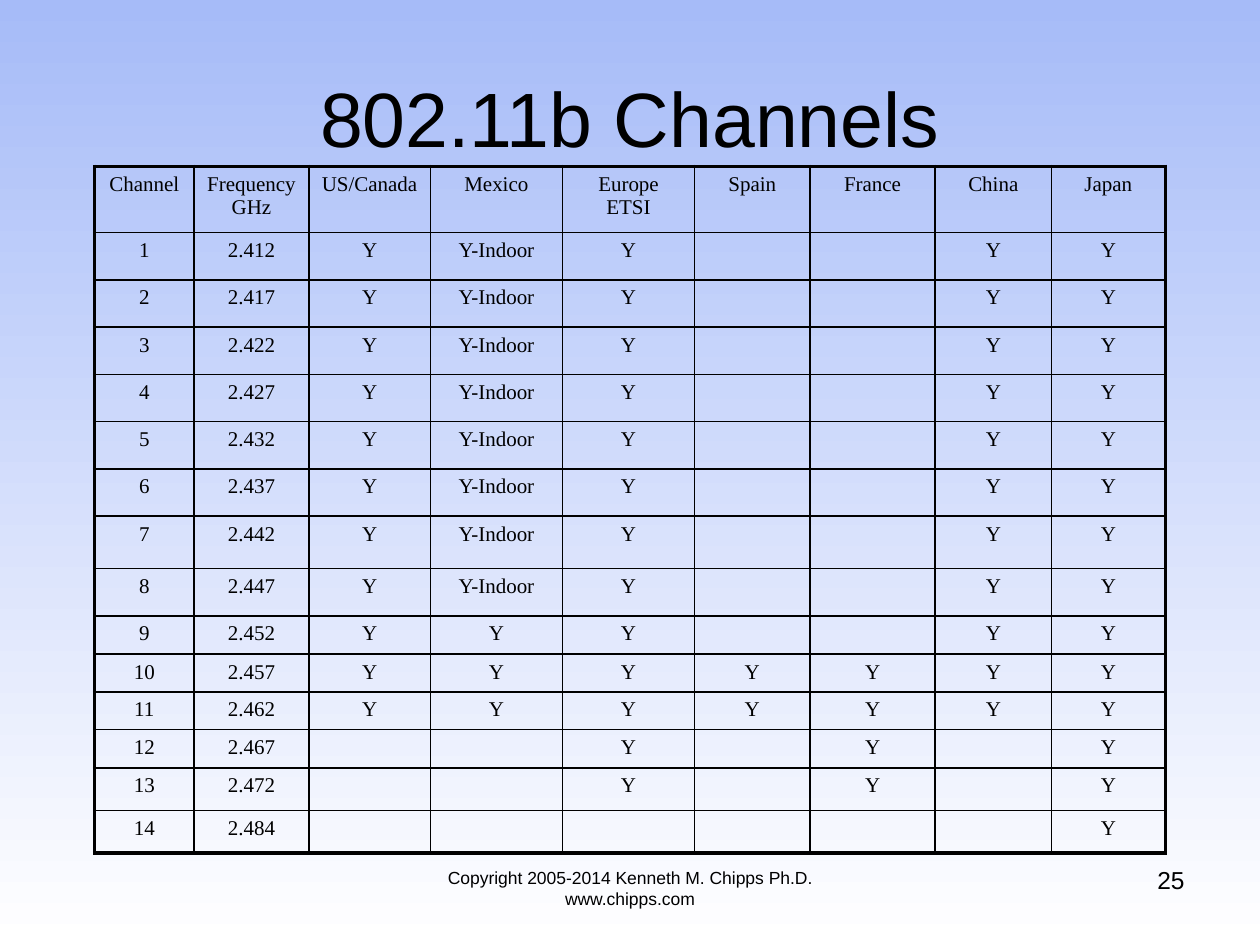
import pptx
import pptx.util
import pptx.dml.color
import pptx.enum.text
import pptx.oxml.ns
import lxml.etree

Pt = pptx.util.Pt
qn = pptx.oxml.ns.qn
ALIGN = pptx.enum.text.PP_ALIGN
ANCHOR = pptx.enum.text.MSO_ANCHOR

COLORS = {"sky": "A6BBF8", "white": "FFFFFF", "ink": "000000"}

# Table content and sizes; \v is a line break inside a cell
HEADS = ["Channel", "Frequency\vGHz", "US/Canada", "Mexico", "Europe\vETSI",
         "Spain", "France", "China", "Japan"]
WIDTHS = [57, 65.5, 69.5, 75.5, 75.5, 66, 71.5, 66.5, 65]
HEIGHTS = [38] + [27] * 6 + [30, 27] + [21.6] * 4 + [24.3] * 2
INSET = 6  # side margin that keeps each heading word on one line
# First and last channel allowed in each region
RANGES = [(1, 11), (1, 11), (1, 13), (10, 11), (10, 13), (1, 11), (1, 14)]
MEXICO = 1
INDOOR = 8  # last indoor-only channel in Mexico
THIN, THICK = 1, 2.25


def rgb(name):
    return pptx.dml.color.RGBColor.from_string(COLORS[name])


def write(frame, text, size=12, font="Arial", color="ink", align=ALIGN.CENTER,
          anchor=ANCHOR.TOP):
    frame.word_wrap = True
    frame.vertical_anchor = anchor
    para = frame.paragraphs[0]
    para.text = text
    para.alignment = align
    for run in para.runs:
        run.font.size = Pt(size)
        run.font.name = font
        run.font.color.rgb = rgb(color)
    # Line breaks and empty cells need the size as well
    for gap in para._p.findall(qn("a:br")):
        lxml.etree.SubElement(gap, qn("a:rPr"), sz=str(size * 100))
    lxml.etree.SubElement(para._p, qn("a:endParaRPr"), sz=str(size * 100))


def box(slide, text, left, top, width, height, **style):
    shape = slide.shapes.add_textbox(Pt(left), Pt(top), Pt(width), Pt(height))
    write(shape.text_frame, text, **style)


def edge(cell, side, width):
    line = lxml.etree.SubElement(cell._tc.get_or_add_tcPr(), qn("a:ln" + side),
                                 w=str(Pt(width)))
    fill = lxml.etree.SubElement(line, qn("a:solidFill"))
    lxml.etree.SubElement(fill, qn("a:srgbClr"), val=COLORS["ink"])


def mark(region, channel):
    first, last = RANGES[region]
    if not first <= channel <= last:
        return ""
    return "Y-Indoor" if region == MEXICO and channel <= INDOOR else "Y"


def rows():
    yield HEADS
    for num in range(1, 15):
        # Channels are 5 MHz apart, except the last
        freq = 2.484 if num == 14 else 2.407 + 0.005 * num
        yield ([str(num), f"{freq:.3f}"]
               + [mark(region, num) for region in range(len(RANGES))])


def grid(slide, left, top):
    table = slide.shapes.add_table(len(HEIGHTS), len(WIDTHS), Pt(left), Pt(top),
                                   Pt(sum(WIDTHS)), Pt(sum(HEIGHTS))).table
    table.first_row = table.horz_banding = False
    for col, width in zip(table.columns, WIDTHS):
        col.width = Pt(width)
    for row, height in zip(table.rows, HEIGHTS):
        row.height = Pt(height)
    for r, texts in enumerate(rows()):
        for c, text in enumerate(texts):
            cell = table.cell(r, c)
            cell.margin_left = cell.margin_right = Pt(INSET)
            write(cell.text_frame, text, font="Times New Roman")
            outer = {"L": c == 0, "R": c == len(WIDTHS) - 1,
                     "T": r == 0, "B": r == len(HEIGHTS) - 1}
            for side, thick in outer.items():
                edge(cell, side, THICK if thick else THIN)
            cell.fill.background()


def paint(slide):
    fill = slide.background.fill
    fill.gradient()
    fill.gradient_angle = 270
    for stop, name, place in zip(fill.gradient_stops, ("sky", "white"), (0, 1)):
        stop.color.rgb = rgb(name)
        stop.position = place


def main():
    deck = pptx.Presentation()
    deck.slide_width, deck.slide_height = Pt(720), Pt(540)
    slide = deck.slides.add_slide(deck.slide_layouts[5])
    paint(slide)

    # Title
    title = slide.shapes.title
    title.left, title.top, title.width, title.height = map(Pt, (36, 21.6, 648, 90))
    write(title.text_frame, "802.11b Channels", size=44, anchor=ANCHOR.MIDDLE)

    # Channel table
    grid(slide, 54, 95)

    # Slide number and footer
    box(slide, "25", 516, 490.5, 168, 37.5, size=14, align=ALIGN.RIGHT)
    box(slide, "Copyright 2005-2014 Kenneth M. Chipps Ph.D. www.chipps.com",
        216, 492, 288, 37.5, size=10)

    deck.save("out.pptx")


if __name__ == "__main__":
    main()
